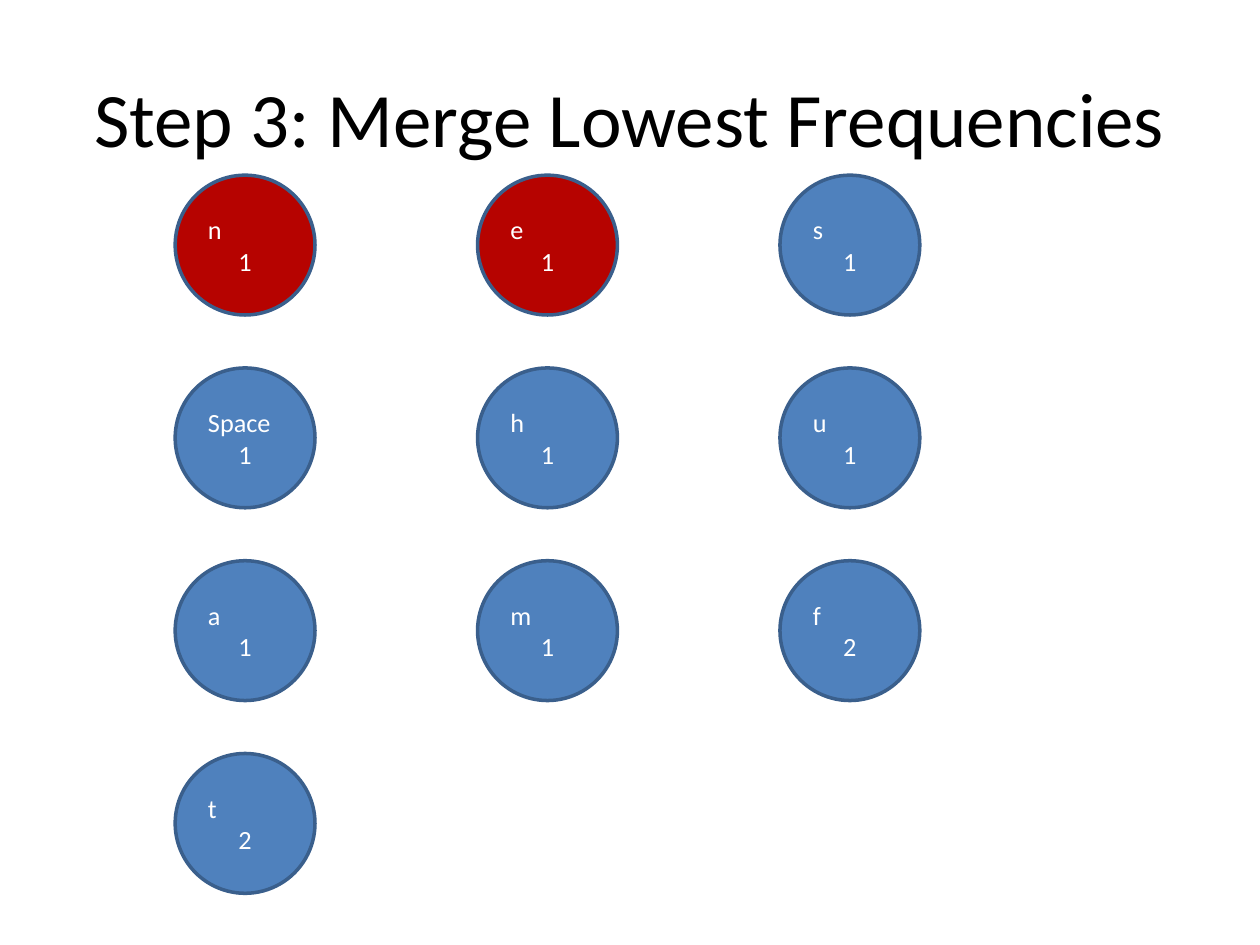
from dataclasses import dataclass

from pptx import Presentation
from pptx.dml.color import RGBColor as RGB
from pptx.enum.shapes import MSO_SHAPE as Shape
from pptx.enum.text import MSO_ANCHOR as Anchor, PP_ALIGN as Align
from pptx.util import Inches, Pt


@dataclass(frozen=True)
class Theme:
    font: str = "Calibri"
    title_size: float = 44
    node_size: float = 15
    line_width: float = 2
    title: str = "000000"
    node_text: str = "FFFFFF"
    node: str = "4F81BD"
    lowest: str = "B60300"
    outline: str = "3A5F8C"


@dataclass(frozen=True)
class Grid:
    """Node positions in inches: first corner, column and row steps, diameter."""
    left: float = 1.39
    top: float = 1.39
    column_step: float = 2.4
    row_step: float = 1.53
    diameter: float = 1.11
    columns: int = 3

    def cell(self, index):
        row, column = divmod(index, self.columns)
        return (self.left + column * self.column_step,
                self.top + row * self.row_step,
                self.diameter, self.diameter)


class FrequencySlide:
    def __init__(self, deck, theme, grid):
        self.theme, self.grid = theme, grid
        self.page = deck.slides.add_slide(deck.slide_layouts[5])

    def add_text(self, para, text, size, color, align):
        para.alignment = align
        span = para.add_run()
        span.text = text
        look = {"name": self.theme.font, "size": Pt(size)}
        for name, value in look.items():
            setattr(span.font, name, value)
        span.font.color.rgb = RGB.from_string(color)

    def title(self, text):
        box = self.page.shapes.title
        place = {"left": 0.5, "top": 0.3, "width": 9, "height": 1.25}
        for name, value in place.items():
            setattr(box, name, Inches(value))
        box.text_frame.vertical_anchor = Anchor.MIDDLE
        self.add_text(box.text_frame.paragraphs[0], text,
                      self.theme.title_size, self.theme.title, Align.CENTER)

    def node(self, index, symbol, count, fill):
        theme = self.theme
        place = [Inches(value) for value in self.grid.cell(index)]
        circle = self.page.shapes.add_shape(Shape.OVAL, *place)
        circle.shadow.inherit = False
        circle.fill.solid()
        circle.fill.fore_color.rgb = RGB.from_string(fill)
        circle.line.color.rgb = RGB.from_string(theme.outline)
        circle.line.width = Pt(theme.line_width)

        # Symbol on the left, its count centred below
        frame = circle.text_frame
        frame.word_wrap = True
        frame.vertical_anchor = Anchor.MIDDLE
        self.add_text(frame.paragraphs[0], symbol,
                      theme.node_size, theme.node_text, Align.LEFT)
        self.add_text(frame.add_paragraph(), str(count),
                      theme.node_size, theme.node_text, Align.CENTER)


FREQUENCIES = {"n": 1, "e": 1, "s": 1, "Space": 1, "h": 1,
               "u": 1, "a": 1, "m": 1, "f": 2, "t": 2}
MERGED = {"n", "e"}


def main():
    deck = Presentation()
    deck.slide_width, deck.slide_height = Inches(10), Inches(7.5)
    theme = Theme()
    slide = FrequencySlide(deck, theme, Grid())

    # Heading
    slide.title("Step 3: Merge Lowest Frequencies")

    # Symbol nodes, with the pair to merge highlighted
    for index, (symbol, count) in enumerate(FREQUENCIES.items()):
        fill = theme.lowest if symbol in MERGED else theme.node
        slide.node(index, symbol, count, fill)

    deck.save("out.pptx")


if __name__ == "__main__":
    main()
